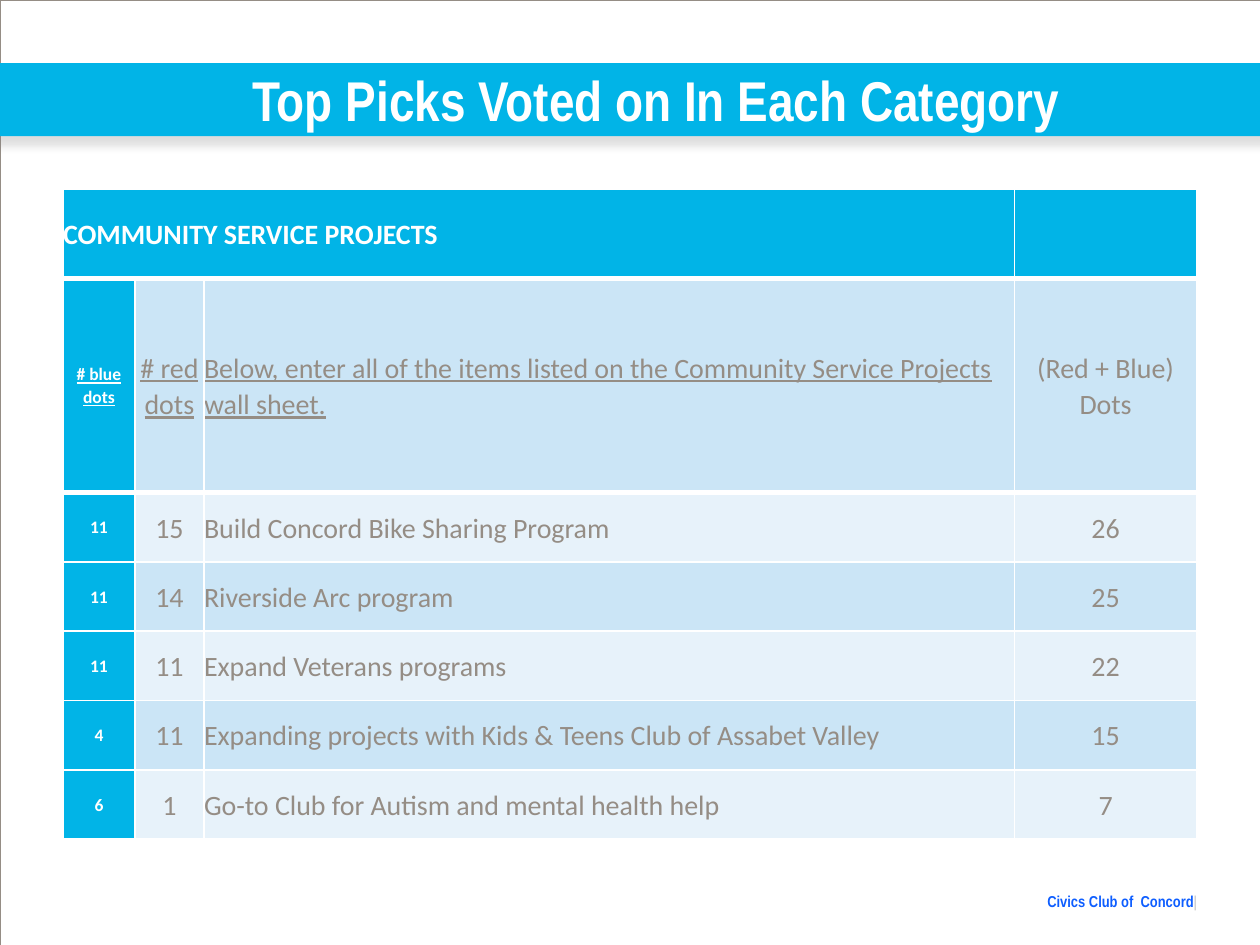
from lxml.etree import SubElement
from pptx import Presentation
from pptx.dml.color import RGBColor
from pptx.enum.shapes import MSO_SHAPE
from pptx.enum.text import MSO_ANCHOR, PP_ALIGN
from pptx.oxml.ns import qn
from pptx.util import Inches, Pt

# Content
TITLE = "Top Picks Voted on In Each Category"
FOOTER = "Civics Club of  Concord"
HEADING = "COMMUNITY SERVICE PROJECTS"
LABELS = ("# blue dots", "# red dots",
          "Below, enter all of the items listed on the Community Service "
          "Projects wall sheet.", "(Red + Blue) Dots")
PROJECTS = [
    (11, 15, "Build Concord Bike Sharing Program"),
    (11, 14, "Riverside Arc program"),
    (11, 11, "Expand Veterans programs"),
    (4, 11, "Expanding projects with Kids & Teens Club of Assabet Valley"),
    (6, 1, "Go-to Club for Autism and mental health help"),
]
COLORS = {"blue": "01B4E7", "dark band": "CBE5F6", "light band": "E7F2FA",
          "gray": "958D85", "white": "FFFFFF", "link": "0E5EFF",
          "bar": "BCBDC0", "shadow": "808080"}
COLUMN_WIDTHS = (0.57, 0.55, 6.43, 1.45)
ROW_HEIGHTS = [0.71, 1.7] + [0.55] * len(PROJECTS)
ITEM_COLUMN = 2


def rgb(name):
    return RGBColor.from_string(COLORS[name])


def add_text(para, text, size=16, color="gray", font="Calibri", bold=False,
             underline=False, align=PP_ALIGN.LEFT, spacing=None):
    para.alignment = align
    if spacing:
        para.line_spacing = spacing
    span = para.add_run()
    span.text = text
    span.font.size = Pt(size)
    span.font.name = font
    span.font.bold = bold
    span.font.underline = underline
    span.font.color.rgb = rgb(color)


def add_box(page, left, top, width, height, anchor):
    box = page.shapes.add_textbox(*map(Inches, (left, top, width, height)))
    frame = box.text_frame
    frame.word_wrap = True
    frame.vertical_anchor = anchor
    frame.margin_left = frame.margin_right = 0
    frame.margin_top = frame.margin_bottom = 0
    return frame.paragraphs[0]


def add_rectangle(page, left, top, width, height):
    shape = page.shapes.add_shape(
        MSO_SHAPE.RECTANGLE, *map(Inches, (left, top, width, height)))
    shape.shadow.inherit = False
    return shape


def add_shadow(shape):
    effects = shape._element.spPr.find(qn("a:effectLst"))
    shadow = SubElement(effects, qn("a:outerShdw"), blurRad=str(Pt(5)),
                        dist=str(Pt(4.8)), dir=str(90 * 60000), rotWithShape="0")
    color = SubElement(shadow, qn("a:srgbClr"), val=COLORS["shadow"])
    SubElement(color, qn("a:alpha"), val="25000")


def set_borders(cell, top, bottom):
    properties = cell._tc.get_or_add_tcPr()
    sides = {"a:lnL": 1, "a:lnR": 1, "a:lnT": top, "a:lnB": bottom}
    for side, width in sides.items():
        line = SubElement(properties, qn(side), w=str(Pt(width)))
        fill = SubElement(line, qn("a:solidFill"))
        SubElement(fill, qn("a:srgbClr"), val=COLORS["white"])


def format_cell(cell, row, column):
    # Borders come before the fill in the cell properties
    set_borders(cell, top=3 if row in (1, 2) else 1,
                bottom=3 if row in (0, 1) else 1)
    band = "dark band" if row % 2 else "light band"
    cell.fill.solid()
    cell.fill.fore_color.rgb = rgb("blue" if row == 0 or column == 0 else band)
    cell.vertical_anchor = MSO_ANCHOR.MIDDLE
    cell.margin_left = cell.margin_right = 0
    cell.margin_top = cell.margin_bottom = 0


def add_votes_table(page):
    rows = [(HEADING, "", "", ""), LABELS]
    rows += [(blue, red, item, blue + red) for blue, red, item in PROJECTS]
    table = page.shapes.add_table(
        len(rows), len(COLUMN_WIDTHS), Inches(0.5), Inches(1.5),
        Inches(sum(COLUMN_WIDTHS)), Inches(sum(ROW_HEIGHTS))).table
    for column, width in zip(table.columns, COLUMN_WIDTHS):
        column.width = Inches(width)
    for row, height in zip(table.rows, ROW_HEIGHTS):
        row.height = Inches(height)
    table.cell(0, 0).merge(table.cell(0, ITEM_COLUMN))

    for r, values in enumerate(rows):
        for c, value in enumerate(values):
            cell = table.cell(r, c)
            format_cell(cell, r, c)
            if value == "":
                continue
            first = c == 0
            left = r == 0 or c == ITEM_COLUMN
            add_text(cell.text_frame.paragraphs[0], str(value),
                     size=10 if first and r > 0 else 16,
                     color="white" if first else "gray", bold=first,
                     underline=r == 1 and c <= ITEM_COLUMN,
                     align=PP_ALIGN.LEFT if left else PP_ALIGN.CENTER,
                     spacing=1.07)


def main():
    deck = Presentation()
    deck.slide_width, deck.slide_height = Inches(10), Inches(7.5)
    page = deck.slides.add_slide(deck.slide_layouts[6])

    # Footer
    footer = add_box(page, 7.75, 7.08, 1.75, 0.14, MSO_ANCHOR.TOP)
    style = {"size": 9, "font": "Arial Narrow", "align": PP_ALIGN.RIGHT}
    add_text(footer, FOOTER, color="link", bold=True, **style)
    add_text(footer, "|", color="bar", **style)

    # Page outline
    outline = add_rectangle(page, 0, 0, 10, 7.5)
    outline.fill.background()
    outline.line.color.rgb = rgb("gray")
    outline.line.width = Pt(0.25)

    # Title banner
    banner = add_rectangle(page, -0.08, 0.5, 10.17, 0.58)
    banner.fill.solid()
    banner.fill.fore_color.rgb = rgb("blue")
    banner.line.fill.background()
    add_shadow(banner)
    title = add_box(page, 0.42, 0.5, 9.58, 0.58, MSO_ANCHOR.MIDDLE)
    add_text(title, TITLE, size=32, color="white", font="Arial Narrow",
             bold=True, align=PP_ALIGN.CENTER)

    # Votes
    add_votes_table(page)
    deck.save("out.pptx")


if __name__ == "__main__":
    main()
